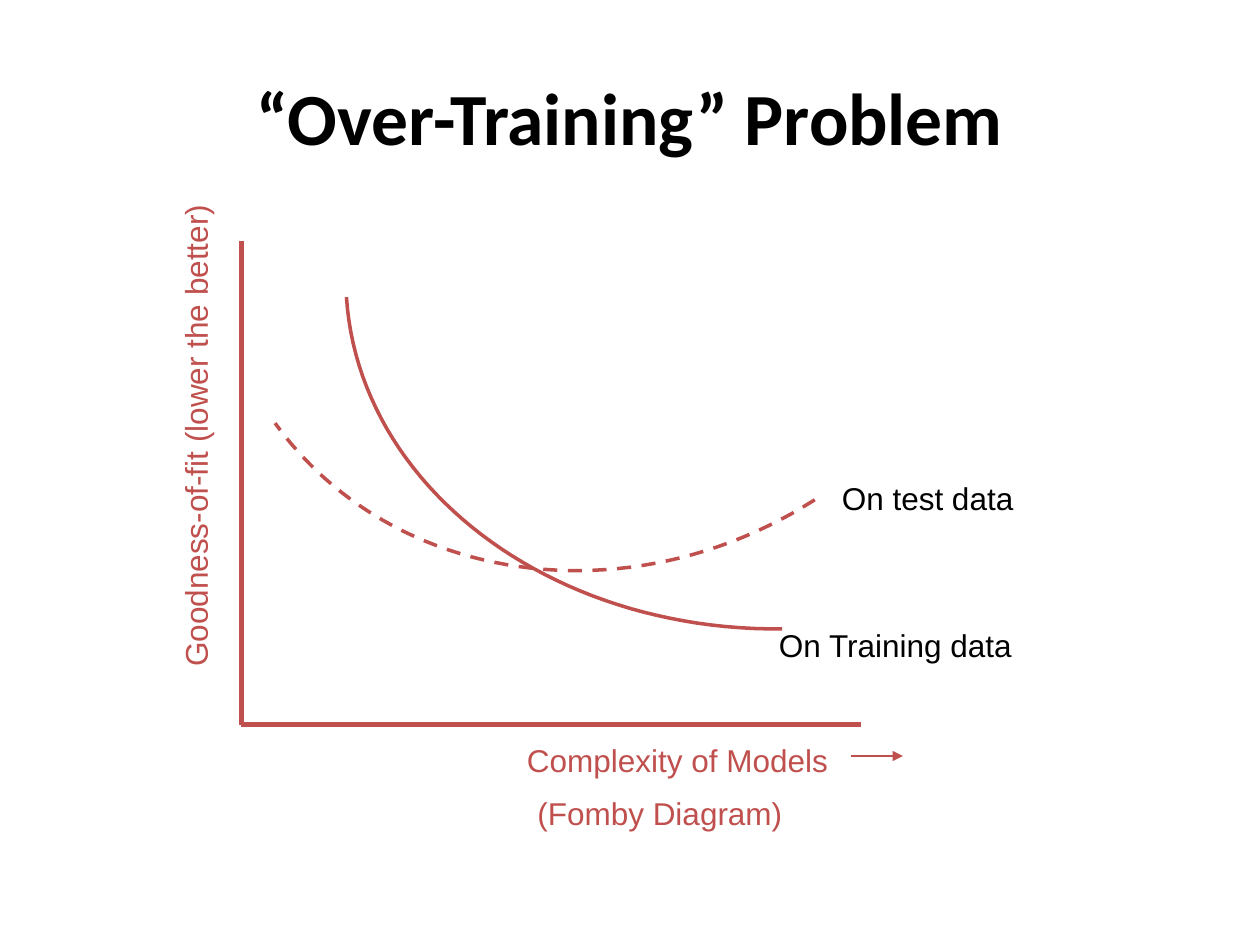
import dataclasses
import typing

import pptx
import pptx.dml.color
import pptx.enum.dml
import pptx.enum.shapes
import pptx.enum.text
import pptx.oxml.ns
import pptx.util
from lxml import etree

RED = pptx.dml.color.RGBColor(0xC0, 0x50, 0x4D)
BLACK = pptx.dml.color.RGBColor(0, 0, 0)
WIDE, HIGH = pptx.util.Inches(10), pptx.util.Inches(7.5)
COLS, ROWS = 120, 90
STEPS = 48

Point = tuple[float, float]


@dataclasses.dataclass(frozen=True)
class Label:
    text: str
    box: tuple[float, float, float, float]
    color: pptx.dml.color.RGBColor = BLACK
    upright: bool = False


@dataclasses.dataclass(frozen=True)
class Line:
    start: Point
    end: Point
    width: float = 3
    arrow: bool = False


@dataclasses.dataclass(frozen=True)
class Curve:
    """A cubic curve: two ends with two control points between them."""
    points: tuple[Point, Point, Point, Point]
    dash: bool = False


LINES = [
    Line((23, 23), (23, 69)),
    Line((23, 69), (82, 69)),
    Line((81, 72), (86, 72), width=0.75, arrow=True),
]
CURVES = [
    Curve(((74.5, 59.9), (52.3, 60.1), (34.2, 46.3), (33, 28.3))),
    Curve(((77.6, 47.6), (59.9, 58.9), (37.3, 55.7), (26.2, 40.3)), dash=True),
]
LABELS = [
    Label("On test data", (79, 45, 24, 4.8)),
    Label("On Training data", (73, 59, 28, 4.8)),
    Label("Complexity of Models", (49, 70, 34, 4.8), RED),
    Label("(Fomby Diagram)", (50, 75, 35, 4.8), RED),
    Label("Goodness-of-fit (lower the better)", (16.2, 13, 6, 51.7), RED, upright=True),
]


def col(count: float) -> int:
    return round(WIDE * count / COLS)


def row(count: float) -> int:
    return round(HIGH * count / ROWS)


def add_text(slide: typing.Any, text: str, box: tuple, *, size: float = 18,
             font: str = "Arial", color=BLACK, bold: bool = False,
             align=pptx.enum.text.PP_ALIGN.LEFT,
             anchor=pptx.enum.text.MSO_ANCHOR.TOP, upright: bool = False) -> None:
    left, top, width, height = box
    frame = slide.shapes.add_textbox(col(left), row(top), col(width), row(height)).text_frame
    frame.word_wrap = True
    frame.vertical_anchor = anchor
    if upright:
        frame._txBody.bodyPr.set("vert", "vert270")
    para = frame.paragraphs[0]
    para.alignment = align
    run = para.add_run()
    run.text = text
    run.font.size = pptx.util.Pt(size)
    run.font.name = font
    run.font.bold = bold
    run.font.color.rgb = color


def draw_line(slide: typing.Any, line: Line) -> None:
    (left, top), (right, base) = line.start, line.end
    shape = slide.shapes.add_connector(
        pptx.enum.shapes.MSO_CONNECTOR.STRAIGHT, col(left), row(top), col(right), row(base))
    shape.line.color.rgb = RED
    shape.line.width = pptx.util.Pt(line.width)
    if line.arrow:
        etree.SubElement(shape.line._get_or_add_ln(),
                         pptx.oxml.ns.qn("a:tailEnd"), type="triangle")
    etree.SubElement(shape._element.spPr, pptx.oxml.ns.qn("a:effectLst"))


def curve_at(points: tuple, t: float) -> tuple[int, int]:
    """Give the place on a cubic curve at share t of its run."""
    s = 1 - t
    parts = (s ** 3, 3 * s * s * t, 3 * s * t * t, t ** 3)
    x, y = (sum(part * value for part, value in zip(parts, axis)) for axis in zip(*points))
    return col(x), row(y)


def draw_curve(slide: typing.Any, curve: Curve) -> None:
    spots = [curve_at(curve.points, step / STEPS) for step in range(STEPS + 1)]
    pen = slide.shapes.build_freeform(*spots[0])
    pen.add_line_segments(spots[1:], close=False)
    shape = pen.convert_to_shape()
    shape.shadow.inherit = False
    shape.fill.background()
    shape.line.color.rgb = RED
    shape.line.width = pptx.util.Pt(2)
    if curve.dash:
        shape.line.dash_style = pptx.enum.dml.MSO_LINE.DASH


def main() -> None:
    deck = pptx.Presentation()
    deck.slide_width, deck.slide_height = WIDE, HIGH
    slide = deck.slides.add_slide(deck.slide_layouts[6])
    add_text(slide, "“Over-Training” Problem", (6, 3.6, 108, 15), size=42,
             font="Calibri", bold=True, align=pptx.enum.text.PP_ALIGN.CENTER,
             anchor=pptx.enum.text.MSO_ANCHOR.MIDDLE)
    for line in LINES:
        draw_line(slide, line)
    for curve in CURVES:
        draw_curve(slide, curve)
    for label in LABELS:
        add_text(slide, label.text, label.box, color=label.color, upright=label.upright)
    deck.save("out.pptx")


if __name__ == "__main__":
    main()
